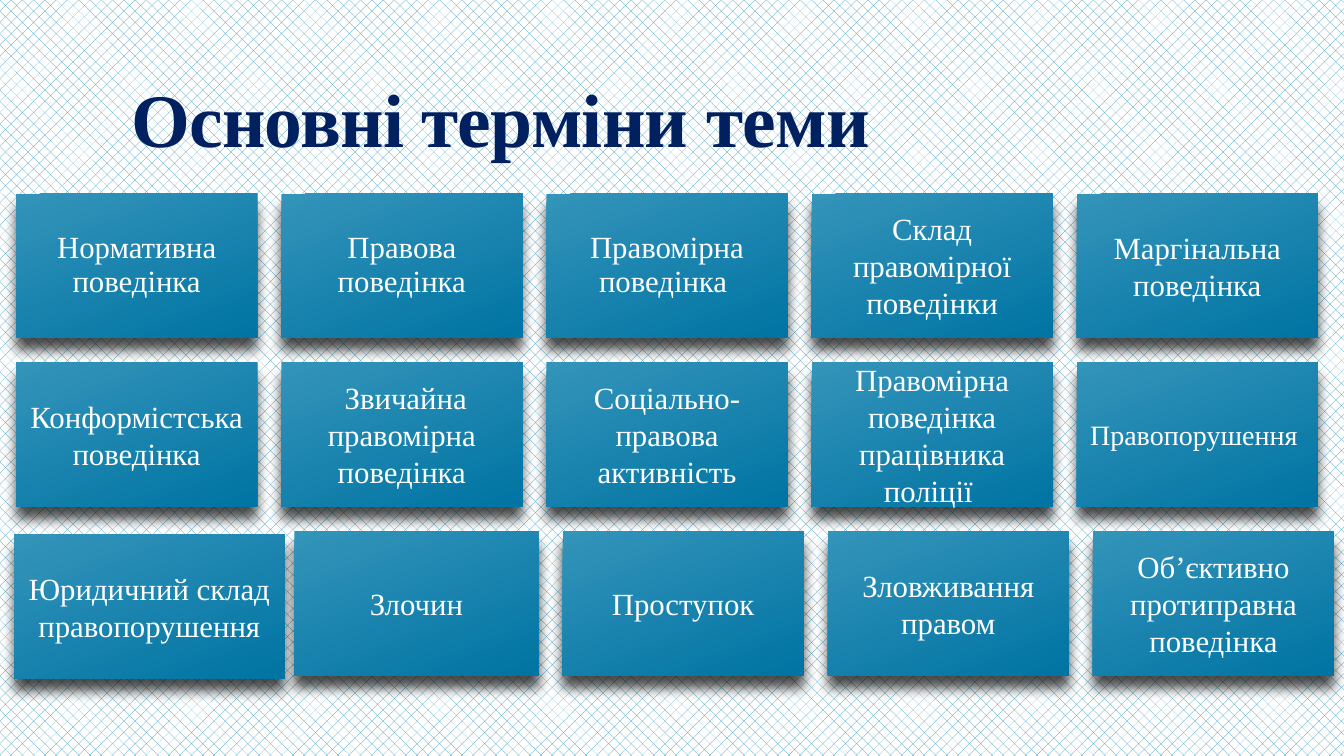
"""Build a slide with the key terms of the topic as a grid of cards."""
from lxml.etree import SubElement
from pptx import Presentation
from pptx.dml.color import RGBColor
from pptx.enum.dml import MSO_PATTERN
from pptx.enum.shapes import MSO_SHAPE
from pptx.enum.text import MSO_ANCHOR, MSO_AUTO_SIZE, PP_ALIGN
from pptx.oxml.ns import qn
from pptx.util import Inches, Pt

TITLE = "Основні терміни теми"
ROWS = [
    ["Нормативна поведінка", "Правова поведінка", "Правомірна поведінка ",
     "Склад правомірної поведінки", "Маргінальна поведінка"],
    ["Конформістська поведінка", " Звичайна правомірна поведінка",
     "Соціально-правова активність", "Правомірна поведінка працівника поліції ",
     "Правопорушення "],
    ["Юридичний склад правопорушення", "Злочин", "Проступок",
     "Зловживання правом", "Об’єктивно протиправна поведінка"],
]
COLORS = {"title": "002060", "light": "3494BA", "dark": "0074A3",
          "white": "FFFFFF", "shadow": "000000"}
FONT = "Times New Roman"
LEFT, TOP = 0.16, 1.92
CARD_WIDTH, CARD_HEIGHT = 2.39, 1.43
COLUMN_STEP, ROW_STEP = 2.63, 1.675
LAST_ROW_SHIFT = 0.16
TIGHT_CARDS = {(0, 0), (0, 1), (0, 2)}
SMALL_CARDS = {(1, 4)}
SPECIAL_BOXES = {(2, 0): (0.14, 5.3, 2.68), (2, 1): (2.92, 5.27, 2.42)}


def color(name):
    return RGBColor.from_string(COLORS[name])


def add_text(paragraph, text, size, color_name, bold=False):
    run = paragraph.add_run()
    run.text = text
    run.font.name = FONT
    run.font.size = Pt(size)
    run.font.bold = bold
    run.font.color.rgb = color(color_name)
    return run


def add_shadow(shape):
    shape.shadow.inherit = False
    effects = shape._element.spPr.find(qn("a:effectLst"))
    shadow = SubElement(effects, qn("a:outerShdw"), blurRad=str(Pt(9)),
                        dist=str(Pt(9)), dir="5400000", algn="ctr", rotWithShape="0")
    shade = SubElement(shadow, qn("a:srgbClr"), val=COLORS["shadow"])
    SubElement(shade, qn("a:alpha"), val="70000")


def card_box(row, column):
    shift = LAST_ROW_SHIFT if row == 2 else 0
    regular = (LEFT + shift + column * COLUMN_STEP, TOP + row * ROW_STEP, CARD_WIDTH)
    return SPECIAL_BOXES.get((row, column), regular)


def add_card(slide, row, column, term):
    left, top, width = card_box(row, column)
    card = slide.shapes.add_shape(MSO_SHAPE.RECTANGLE, Inches(left), Inches(top),
                                  Inches(width), Inches(CARD_HEIGHT))
    card.fill.gradient()
    card.fill.gradient_angle = 360 - 69
    for stop, name in zip(card.fill.gradient_stops, ("light", "dark")):
        stop.color.rgb = color(name)
    card.line.fill.background()
    add_shadow(card)

    small = (row, column) in SMALL_CARDS
    inset = Inches(0.08 if small else 0.09)
    frame = card.text_frame
    frame.word_wrap = True
    frame.vertical_anchor = MSO_ANCHOR.MIDDLE
    frame.margin_left = frame.margin_right = inset
    frame.margin_top = frame.margin_bottom = inset
    paragraph = frame.paragraphs[0]
    paragraph.alignment = PP_ALIGN.CENTER
    if (row, column) in TIGHT_CARDS:
        paragraph.line_spacing = 0.9
    add_text(paragraph, term, 20 if small else 22, "white")


def add_title(slide):
    title = slide.shapes.title
    title.left, title.top = Inches(1.2), Inches(0.7)
    title.width, title.height = Inches(11), Inches(0.97)
    frame = title.text_frame
    frame.word_wrap = True
    frame.auto_size = MSO_AUTO_SIZE.NONE
    frame.vertical_anchor = MSO_ANCHOR.BOTTOM
    paragraph = frame.paragraphs[0]
    paragraph.alignment = PP_ALIGN.LEFT
    paragraph.line_spacing = 0.85
    run = add_text(paragraph, TITLE, 54, "title", bold=True)
    run.font._element.set("spc", "-50")


def main():
    presentation = Presentation()
    presentation.slide_width, presentation.slide_height = Inches(13.33), Inches(7.5)
    slide = presentation.slides.add_slide(presentation.slide_layouts[5])
    background = slide.background.fill
    background.patterned()
    background.pattern = MSO_PATTERN.PERCENT_25
    background.fore_color.rgb = color("light")
    background.back_color.rgb = color("white")
    add_title(slide)
    for row, terms in enumerate(ROWS):
        for column, term in enumerate(terms):
            add_card(slide, row, column, term)
    presentation.save("out.pptx")


if __name__ == "__main__":
    main()
